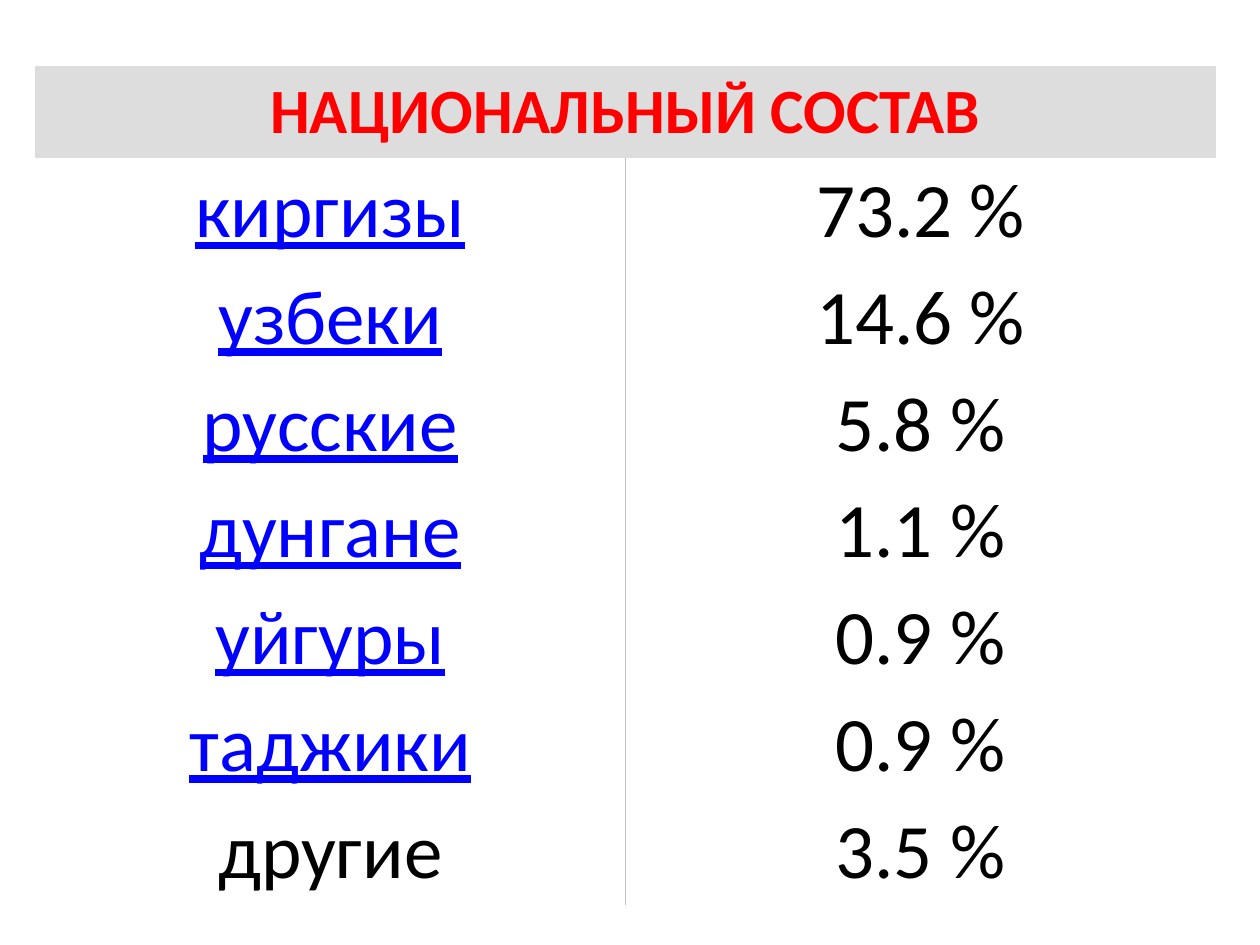
from lxml import etree
from pptx import Presentation
from pptx.dml.color import RGBColor
from pptx.enum.text import MSO_ANCHOR, PP_ALIGN
from pptx.oxml import parse_xml
from pptx.oxml.ns import nsdecls
from pptx.util import Pt

MIDDLE = MSO_ANCHOR.MIDDLE
CENTER = PP_ALIGN.CENTER
BLANK_LAYOUT = 6

THEME = {
    "font": "Calibri",
    "header": {"size": Pt(36), "bold": True, "color": "FF0000"},
    "link": {"size": Pt(44), "bold": False, "underline": True, "color": "0000FF"},
    "plain": {"size": Pt(44), "bold": False, "color": "000000"},
    "header_fill": "DDDDDD",
    "divider": "C0C0C0",
    "divider_width": Pt(0.75),
}

HEADER = "НАЦИОНАЛЬНЫЙ СОСТАВ"
PEOPLES = [
    ("киргизы", "73.2 %", "link"),
    ("узбеки", "14.6 %", "link"),
    ("русские", "5.8 %", "link"),
    ("дунгане", "1.1 %", "link"),
    ("уйгуры", "0.9 %", "link"),
    ("таджики", "0.9 %", "link"),
    ("другие", "3.5 %", "plain"),
]
ROW_HEIGHT = Pt(52.56)


def write_cell(cell, text, style):
    cell.vertical_anchor = MIDDLE
    para = cell.text_frame.paragraphs[0]
    para.alignment = CENTER
    span = para.add_run()
    span.text = text
    span.font.name = THEME["font"]
    for name, value in THEME[style].items():
        if name == "color":
            span.font.color.rgb = RGBColor.from_string(value)
        else:
            setattr(span.font, name, value)


def draw_border(cell, side):
    line = parse_xml(
        f'<a:{side} {nsdecls("a")} w="{THEME["divider_width"]}"><a:solidFill>'
        f'<a:srgbClr val="{THEME["divider"]}"/></a:solidFill></a:{side}>'
    )
    cell._tc.get_or_add_tcPr().insert(0, line)


# Page
deck = Presentation()
deck.slide_width, deck.slide_height = Pt(720), Pt(540)
page = deck.slides.add_slide(deck.slide_layouts[BLANK_LAYOUT])

# Table without a banded style
frame = page.shapes.add_table(
    len(PEOPLES) + 1, 2, Pt(20.16), Pt(37.8), Pt(674.64), Pt(473)
)
table = frame.table
table.first_row = table.horz_banding = False
style_id = table._tbl.tblPr.find("{*}tableStyleId")
style_id.text = "{2D5ABB26-0587-4C30-8999-92F81FD0307C}"
for row in table.rows:
    row.height = ROW_HEIGHT

# Header across both columns
header = table.cell(0, 0)
header.merge(table.cell(0, 1))
write_cell(header, HEADER, "header")
header.fill.solid()
header.fill.fore_color.rgb = RGBColor.from_string(THEME["header_fill"])

# One row per people, split by a thin divider
for index, (people, share, style) in enumerate(PEOPLES, start=1):
    name_cell, share_cell = table.cell(index, 0), table.cell(index, 1)
    write_cell(name_cell, people, style)
    write_cell(share_cell, share, "plain")
    for cell, side in ((name_cell, "lnR"), (share_cell, "lnL")):
        cell.fill.background()
        draw_border(cell, side)

deck.save("out.pptx")
